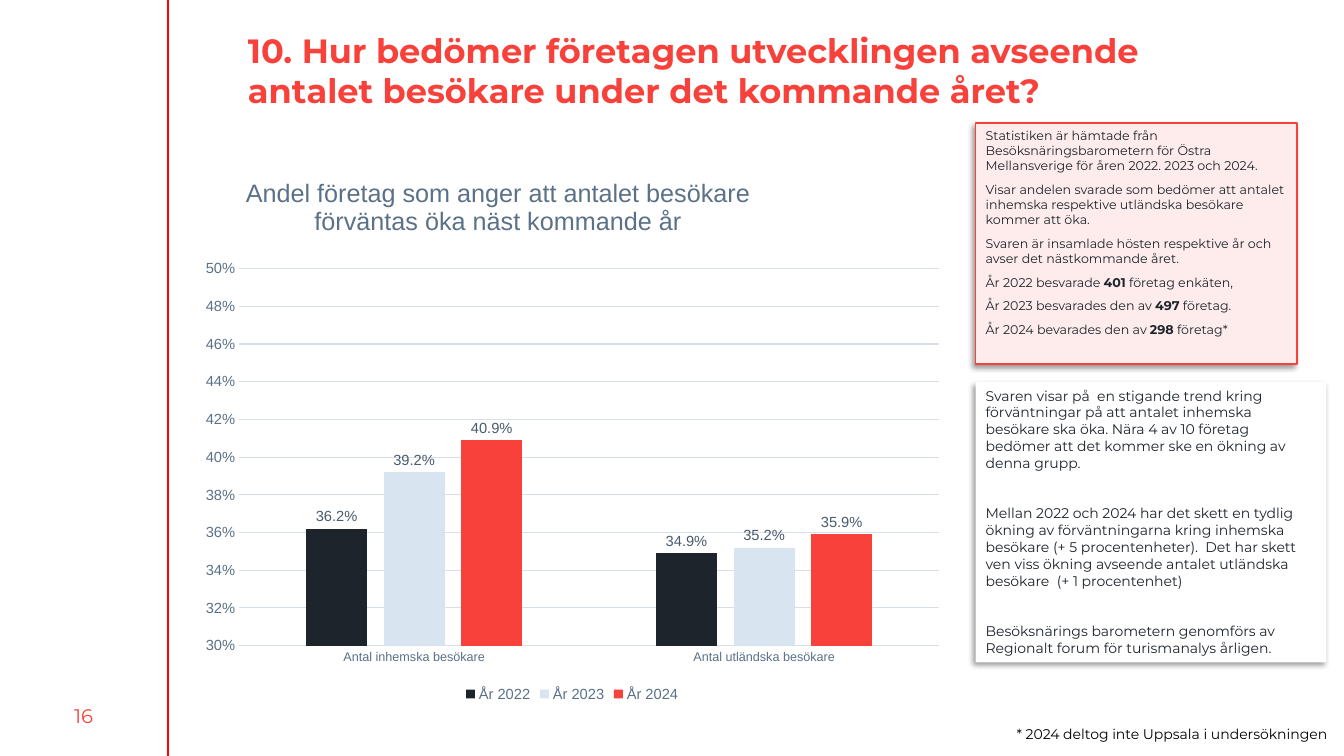
from lxml import etree
from pptx import Presentation
from pptx import util as u
from pptx.chart.data import CategoryChartData
from pptx.dml.color import RGBColor
from pptx.enum import chart as ch, shapes, text
from pptx.oxml import parse_xml
from pptx.oxml.ns import nsdecls, qn

RED, DARK, PALE, SLATE, GRID = "F7413A", "1D242B", "D8E5F0", "5B7187", "D8DEE5"
CHART_WIDTH, CHART_HEIGHT = 19.28, 13.61

TITLE = "10. Hur bedömer företagen utvecklingen avseende antalet besökare under det kommande året?"
CHART_TITLE = "Andel företag som anger att antalet besökare förväntas öka näst kommande år"
CATEGORIES = ["Antal inhemska besökare", "Antal utländska besökare"]
SERIES = [
    ("År 2022", (0.362, 0.349), DARK),
    ("År 2023", (0.392, 0.352), PALE),
    ("År 2024", (0.409, 0.359), "F8413A"),
]
SOURCE_FACTS = [
    "Statistiken är hämtade från Besöksnäringsbarometern för Östra Mellansverige för åren 2022. 2023 och 2024.",
    "Visar andelen svarade som bedömer att antalet inhemska respektive utländska besökare kommer att öka.",
    "Svaren är insamlade hösten respektive år och avser det nästkommande året.",
    "År 2022 besvarade **401** företag enkäten,",
    "År 2023 besvarades den av **497** företag.",
    "År 2024 bevarades den av **298** företag*",
]
CONCLUSIONS = [
    "Svaren visar på  en stigande trend kring förväntningar på att antalet inhemska besökare ska öka. "
    "Nära 4 av 10 företag bedömer att det kommer ske en ökning av denna grupp.",
    "Mellan 2022 och 2024 har det skett en tydlig ökning av förväntningarna kring inhemska besökare "
    "(+ 5 procentenheter).  Det har skett ven viss ökning avseende antalet utländska besökare  "
    "(+ 1 procentenhet)",
    "Besöksnärings barometern genomförs av Regionalt forum för turismanalys årligen.",
]


def color(hex_value):
    return RGBColor.from_string(hex_value)


def place(*lengths):
    return [u.Cm(length) for length in lengths]


def apply(target, formats):
    for name, value in formats.items():
        setattr(target, name, value)


def set_font(font, size, hex_value, name="Montserrat", bold=False):
    apply(font, {"size": u.Pt(size), "name": name, "bold": bold})
    font.color.rgb = color(hex_value)


def set_line(line, hex_value, width=0.75):
    line.color.rgb = color(hex_value)
    line.width = u.Pt(width)


def write(frame, paragraphs, size, hex_value, bold=False, gap=0, **formats):
    """Fill a text frame; words between ** marks are bold, gap is space before."""
    for index, content in enumerate(paragraphs):
        paragraph = frame.add_paragraph() if index else frame.paragraphs[0]
        apply(paragraph, formats)
        if index:
            paragraph.space_before = u.Pt(gap)
        for part, words in enumerate(content.split("**")):
            run = paragraph.add_run()
            run.text = words
            set_font(run.font, size, hex_value, bold=bold or part % 2 == 1)


def add_text(slide, box, content, size, hex_value, frame_formats, **formats):
    frame = slide.shapes.add_textbox(*place(*box)).text_frame
    apply(frame, {"word_wrap": True, **frame_formats})
    write(frame, [content], size, hex_value, **formats)


def add_shadow(shape):
    shape.shadow.inherit = False
    effects = shape._element.spPr.find(qn("a:effectLst"))
    effects.append(parse_xml(
        f'<a:outerShdw {nsdecls("a")} blurRad="50800" dist="38100" dir="8100000" '
        'algn="tr" rotWithShape="0"><a:srgbClr val="000000"><a:alpha val="40000"/>'
        '</a:srgbClr></a:outerShdw>'))


def add_note(slide, box, paragraphs, size, fill, border=None, gap=3):
    shape = slide.shapes.add_shape(shapes.MSO_SHAPE.RECTANGLE, *place(*box))
    shape.fill.solid()
    shape.fill.fore_color.rgb = color(fill)
    if border:
        set_line(shape.line, border, 1)
    else:
        shape.line.fill.background()
    add_shadow(shape)
    apply(shape.text_frame, {"word_wrap": True, "vertical_anchor": text.MSO_ANCHOR.TOP})
    write(shape.text_frame, paragraphs, size, DARK, gap=gap,
          alignment=text.PP_ALIGN.LEFT, space_after=u.Pt(3))


def add_margin_line(slide, x, height):
    line = slide.shapes.add_connector(shapes.MSO_CONNECTOR.STRAIGHT, *place(x, 0, x, height))
    set_line(line.line, "FF0000", 1.25)
    etree.SubElement(line._element.spPr, qn("a:effectLst"))


def set_layout(element, before, **lengths):
    """Place a chart part, in centimetres within the chart, ahead of the named child."""
    for old in element.findall(qn("c:layout")):
        element.remove(old)
    inner = '<c:layoutTarget val="inner"/>' if "w" in lengths else ""
    modes = "".join(f'<c:{axis}Mode val="edge"/>' for axis in "xy")
    values = "".join(
        f'<c:{key} val="{length / (CHART_WIDTH if key in "xw" else CHART_HEIGHT):.4f}"/>'
        for key, length in lengths.items())
    element.find(qn(before)).addprevious(parse_xml(
        f'<c:layout {nsdecls("c")}><c:manualLayout>{inner}{modes}{values}'
        '</c:manualLayout></c:layout>'))


def style_axes(chart):
    category, value = chart.category_axis, chart.value_axis
    for axis, size in ((category, 9), (value, 10.5)):
        axis.major_tick_mark = axis.minor_tick_mark = ch.XL_TICK_MARK.NONE
        set_font(axis.tick_labels.font, size, SLATE, "Arial")
    set_line(category.format.line, GRID)
    value.format.line.fill.background()
    apply(value, {"minimum_scale": 0.3, "maximum_scale": 0.5, "major_unit": 0.02,
                  "has_major_gridlines": True})
    set_line(value.major_gridlines.format.line, GRID)
    apply(value.tick_labels, {"number_format": "0%", "number_format_is_linked": False})


def style_series(plot):
    apply(plot, {"gap_width": 219, "overlap": -27, "vary_by_categories": False})
    for series, (_, _, fill) in zip(plot.series, SERIES):
        series.format.fill.solid()
        series.format.fill.fore_color.rgb = color(fill)
        labels = series.data_labels
        apply(labels, {"show_value": True, "number_format": "0.0%",
                       "number_format_is_linked": False,
                       "position": ch.XL_LABEL_POSITION.OUTSIDE_END})
        set_font(labels.font, 10.5, "495B6C", "Arial")


def add_visitor_chart(slide, left, top):
    data = CategoryChartData(number_format="0.0%")
    data.categories = CATEGORIES
    for name, values, _ in SERIES:
        data.add_series(name, values)
    box = place(left, top, CHART_WIDTH, CHART_HEIGHT)
    chart = slide.shapes.add_chart(ch.XL_CHART_TYPE.COLUMN_CLUSTERED, *box, data).chart
    set_font(chart.font, 10, DARK, "Arial")

    chart.has_title = True
    title = chart.chart_title
    title.include_in_layout = False
    title.text_frame.text = CHART_TITLE
    set_font(title.text_frame.paragraphs[0].runs[0].font, 18, SLATE, "Arial")
    set_layout(title._element, "c:overlay", x=1.3, y=0.14)

    style_axes(chart)
    style_series(chart.plots[0])
    plot_area = chart._chartSpace.chart.plotArea
    set_layout(plot_area, "c:barChart", x=1.25, y=2.58, w=17.64, h=9.5)

    chart.has_legend = True
    apply(chart.legend, {"position": ch.XL_LEGEND_POSITION.BOTTOM, "include_in_layout": False})
    set_font(chart.legend.font, 10.5, SLATE, "Arial")


def main():
    presentation = Presentation()
    apply(presentation, {"slide_width": u.Cm(33.87), "slide_height": u.Cm(19.05)})
    slide = presentation.slides.add_slide(presentation.slide_layouts[6])
    middle = {"vertical_anchor": text.MSO_ANCHOR.MIDDLE}
    insets = {f"margin_{side}": u.Cm(0.13) for side in ("left", "top", "right", "bottom")}

    add_text(slide, (0, 17.53, 4.22, 1.02), "16", 14, RED, middle,
             alignment=text.PP_ALIGN.CENTER)
    add_margin_line(slide, 4.24, 19.05)
    add_text(slide, (6.12, 0.64, 25.7, 2.26), TITLE, 24, RED, {**middle, **insets}, bold=True)
    add_note(slide, (24.59, 3.1, 8.1, 6.07), SOURCE_FACTS, 9, "FEECEC", RED)
    add_note(slide, (24.59, 9.63, 8.84, 7.06), CONCLUSIONS, 10, "FFFFFF", gap=21)
    add_visitor_chart(slide, 4.78, 4.19)
    add_text(slide, (25.37, 18.08, 8.5, 0.9), "* 2024 deltog inte Uppsala i undersökningen",
             10, "000000", {"margin_right": 0}, line_spacing=1.2)
    presentation.save("out.pptx")


if __name__ == "__main__":
    main()
